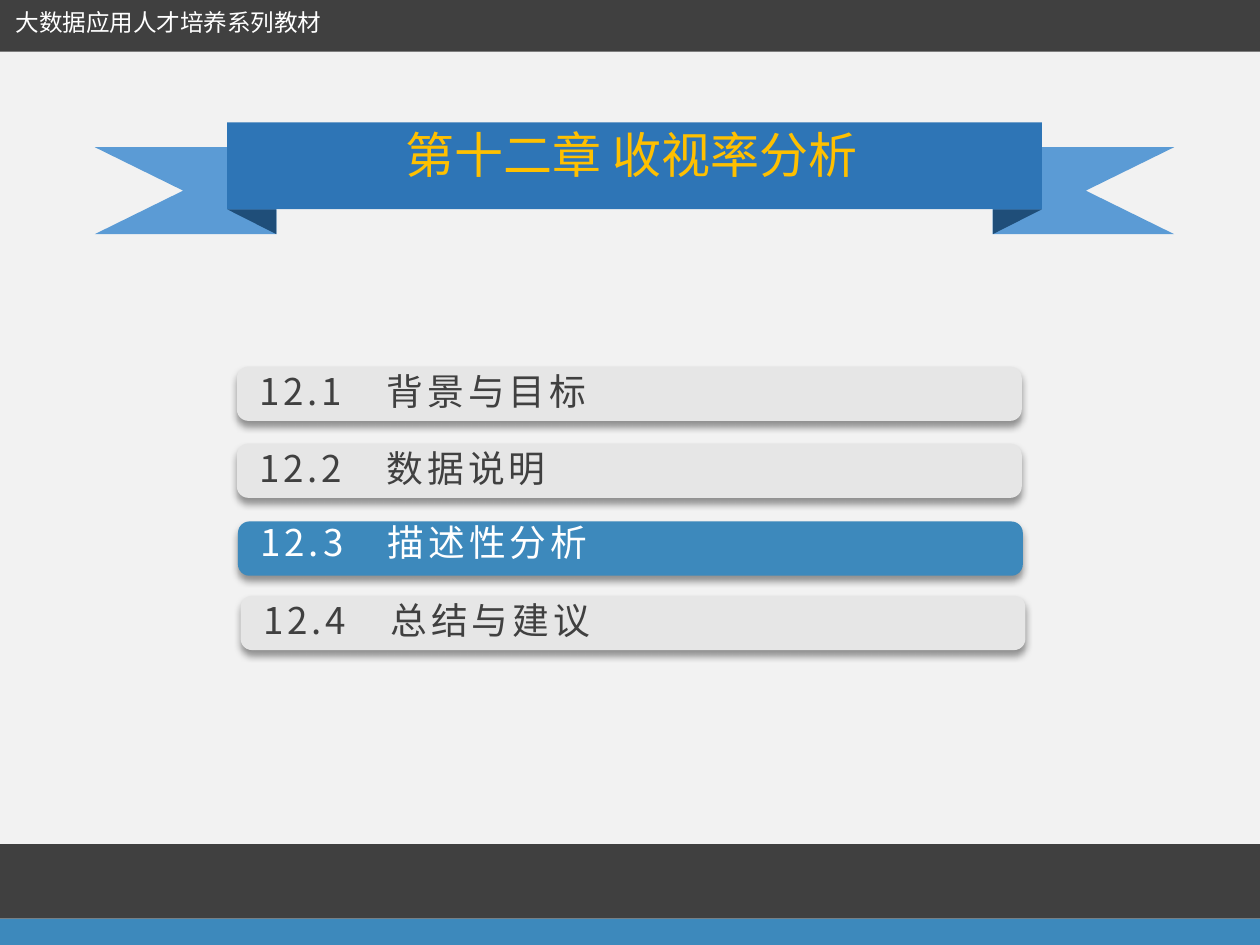
from lxml import etree
from pptx import Presentation
from pptx.dml.color import RGBColor
from pptx.enum.shapes import MSO_SHAPE
from pptx.enum.text import PP_ALIGN
from pptx.oxml.ns import qn
from pptx.util import Pt

RECT = MSO_SHAPE.RECTANGLE
ROUNDED = MSO_SHAPE.ROUNDED_RECTANGLE
TRIANGLE = MSO_SHAPE.RIGHT_TRIANGLE
LEFT, CENTER = PP_ALIGN.LEFT, PP_ALIGN.CENTER

PAPER = RGBColor(0xF2, 0xF2, 0xF2)
DARK = RGBColor(0x40, 0x40, 0x40)
GREY = RGBColor(0xE6, 0xE6, 0xE6)
ACCENT = RGBColor(0x3D, 0x89, 0xBC)
WHITE = RGBColor(0xFF, 0xFF, 0xFF)
GOLD = RGBColor(0xFF, 0xC0, 0x00)
RIBBON = RGBColor(0x2E, 0x75, 0xB6)
TAIL = RGBColor(0x5B, 0x9B, 0xD5)
FOLD = RGBColor(0x1F, 0x4E, 0x79)

FONT = "Noto Sans CJK SC"
PAGE_WIDTH, PAGE_HEIGHT = 720, 540

# left, top, text offset from the top of the bar, wording
SECTIONS = [
    (135.4, 209.5, 1.4, "12.1\u3000背景与目标".replace("\u3000", "　")),
    (135.4, 253.5, 1.4, "12.2　数据说明"),
    (136, 298, -0.8, "12.3　描述性分析"),
    (137.5, 340.5, 0.8, "12.4　总结与建议"),
]
SECTIONS[0] = (135.4, 209.5, 1.4, "12.1　背景与目标")
CURRENT = 2


def paint(shape, color):
    shape.shadow.inherit = False
    shape.fill.solid()
    shape.fill.fore_color.rgb = color
    shape.line.fill.background()


def add_block(page, kind, box, color, rotation=0):
    shape = page.shapes.add_shape(kind, *map(Pt, box))
    shape.rotation = rotation
    paint(shape, color)
    return shape


def add_text(page, box, text, size, color, align=LEFT, spacing=0):
    """One unwrapped line, set flush with the top of its box."""
    frame = page.shapes.add_textbox(*map(Pt, box)).text_frame
    for name, value in {"word_wrap": False, "margin_top": 0, "margin_bottom": 0}.items():
        setattr(frame, name, value)
    para = frame.paragraphs[0]
    para.alignment = align
    span = para.add_run()
    span.text = text
    for name, value in {"name": FONT, "size": Pt(size)}.items():
        setattr(span.font, name, value)
    span.font.color.rgb = color
    properties = span.font._element
    etree.SubElement(properties, qn("a:ea"), typeface=FONT)
    if spacing:
        properties.set("spc", str(round(spacing * 100)))


def add_drop_shadow(shape):
    effects = shape._element.spPr.find(qn("a:effectLst"))
    shadow = etree.SubElement(effects, qn("a:outerShdw"), blurRad=str(Pt(4)),
                              dist=str(Pt(3)), dir="5400000", algn="t", rotWithShape="0")
    color = etree.SubElement(shadow, qn("a:srgbClr"), val="000000")
    etree.SubElement(color, qn("a:alpha"), val="40000")


def add_header(page, left, top, width, height):
    add_block(page, RECT, (left, top, width, height), DARK)
    add_text(page, (left + 0.7, top + 4.6, 191.5, 24), "大数据应用人才培养系列教材",
             13.5, WHITE, CENTER)


def add_footer(page, left, top, width, height):
    stripe = 15
    add_block(page, RECT, (left, top, width, height - stripe), DARK)
    add_block(page, RECT, (left, top + height - stripe, width, stripe), ACCENT)


def add_ribbon(page, left, top, width, height):
    """Title bar with a notched tail and a dark fold at each end."""
    drop, bar_inset, tail_width, notch = 14.2, 75.6, 103.7, 50.5
    bar_height = height - drop
    right, bottom, tail_top = left + width, top + height, top + drop
    fold = tail_width - bar_inset

    for edge, inward in ((left, 1), (right, -1)):
        inner = edge + inward * tail_width
        corners = [(edge, tail_top), (inner, tail_top), (inner, bottom), (edge, bottom),
                   (edge + inward * notch, (tail_top + bottom) / 2)]
        points = [(Pt(x), Pt(y)) for x, y in corners]
        builder = page.shapes.build_freeform(*points[0])
        builder.add_line_segments(points[1:], close=True)
        paint(builder.convert_to_shape(), TAIL)

    fold_top = top + bar_height
    add_block(page, TRIANGLE, (left + bar_inset, fold_top, fold, drop), FOLD, 180)
    # A quarter turn swaps width and height about the centre.
    shift = (fold - drop) / 2
    add_block(page, TRIANGLE,
              (right - tail_width + shift, fold_top - shift, drop, fold), FOLD, 90)

    add_block(page, RECT, (left + bar_inset, top, width - 2 * bar_inset, bar_height), RIBBON)
    add_text(page, (left + 170.6, top + 1, 286, 41), "第十二章 收视率分析", 28, GOLD)


def add_section(page, left, top, width, height, text_offset, text, current):
    bar = add_block(page, ROUNDED, (left, top, width, height), ACCENT if current else GREY)
    bar.adjustments[0] = 0.21
    add_drop_shadow(bar)
    add_text(page, (left + 5.8, top + text_offset, 207, 32), text, 21,
             WHITE if current else DARK, spacing=2.2)


def main():
    deck = Presentation()
    deck.slide_width, deck.slide_height = Pt(PAGE_WIDTH), Pt(PAGE_HEIGHT)
    page = deck.slides.add_slide(deck.slide_layouts[6])
    page.background.fill.solid()
    page.background.fill.fore_color.rgb = PAPER

    add_header(page, 0, 0, PAGE_WIDTH, 29.5)
    add_footer(page, 0, 482.4, PAGE_WIDTH, 57.6)
    add_ribbon(page, 54.2, 69.9, 616.8, 63.9)
    for index, (left, top, text_offset, text) in enumerate(SECTIONS):
        add_section(page, left, top, 448.5, 31, text_offset, text, index == CURRENT)
    deck.save("out.pptx")


if __name__ == "__main__":
    main()
